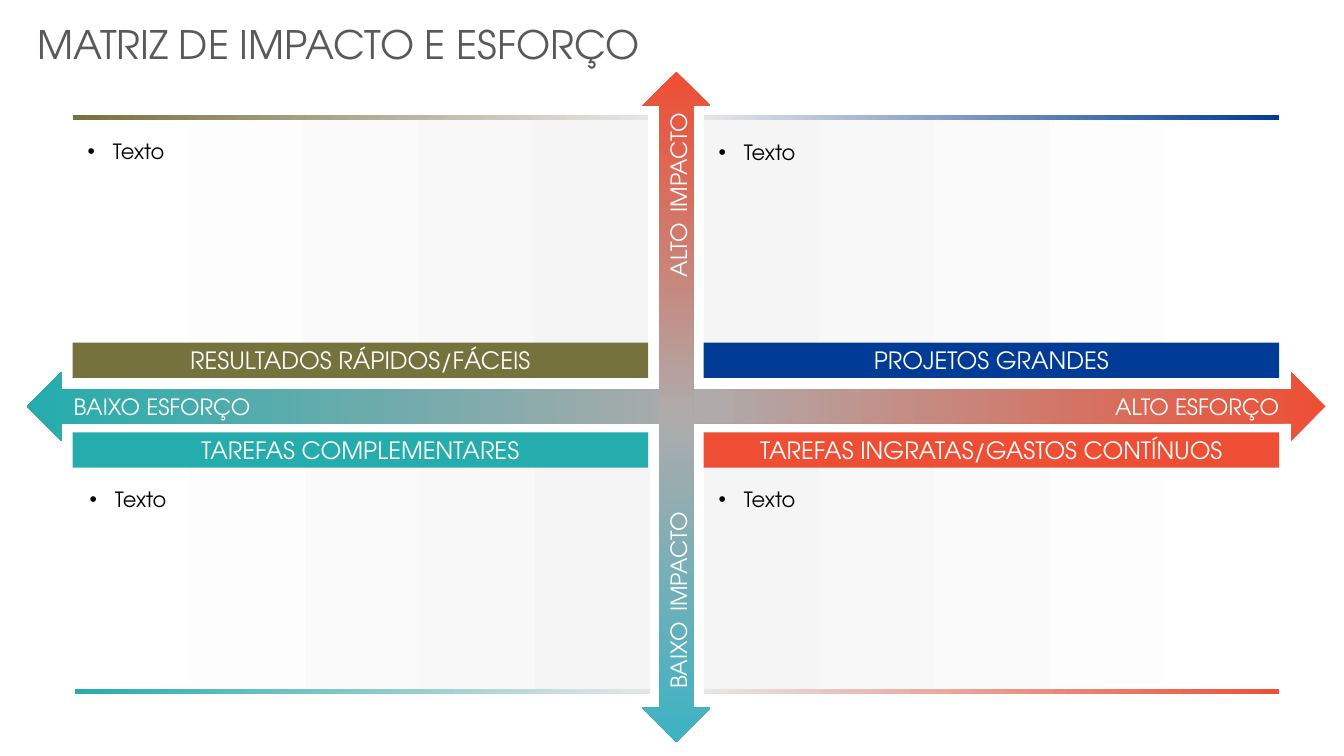
import pptx
import pptx.dml.color
import pptx.enum.shapes
import pptx.enum.text
import pptx.oxml.ns
import pptx.util
from lxml import etree

Pt = pptx.util.Pt
qn = pptx.oxml.ns.qn
SHAPES = pptx.enum.shapes.MSO_SHAPE
ALIGN = pptx.enum.text.PP_ALIGN
ANCHOR = pptx.enum.text.MSO_ANCHOR


def color(value):
    return pptx.dml.color.RGBColor.from_string(value)


class Painter:
    font = "TeX Gyre Adventor"
    white = "FFFFFF"

    def __init__(self, page):
        self.page = page

    def shape(self, kind, place, fill=None, stops=None, angle=0, rotation=0):
        shape = self.page.shapes.add_shape(kind, *map(Pt, place))
        shape.shadow.inherit = False
        shape.line.fill.background()
        shape.rotation = rotation
        if fill:
            shape.fill.solid()
            shape.fill.fore_color.rgb = color(fill)
        else:
            self.gradient(shape, stops, angle)
        return shape

    def gradient(self, shape, stops, angle):
        shape.fill.gradient()
        shape.fill.gradient_angle = (360 - angle) % 360
        stop_list = next(shape.element.iter(qn("a:gsLst")))
        for stop in list(stop_list):
            stop_list.remove(stop)
        for position, value in stops:
            stop = etree.SubElement(stop_list, qn("a:gs"), pos=str(position * 1000))
            etree.SubElement(stop, qn("a:srgbClr"), val=value)

    def rectangle(self, place, fill=None, stops=None):
        return self.shape(SHAPES.RECTANGLE, place, fill, stops)

    def arrow(self, place, stops, rotation=0):
        arrow = self.shape(SHAPES.UP_DOWN_ARROW, place, stops=stops, angle=90, rotation=rotation)
        arrow.adjustments[0] = 0.463
        arrow.adjustments[1] = 0.5

    def fill_text(self, box, spans, ink, align=ALIGN.LEFT, anchor=ANCHOR.MIDDLE,
                  insets=(0, 0, 0, 0), wrap=True):
        frame = box.text_frame
        frame.word_wrap = wrap
        frame.vertical_anchor = anchor
        frame.margin_left, frame.margin_top, frame.margin_right, frame.margin_bottom = map(Pt, insets)
        para = frame.paragraphs[0]
        para.alignment = align
        for text, size in spans:
            span = para.add_run()
            span.text = text
            span.font.size = Pt(size)
            span.font.name = self.font
            span.font.color.rgb = color(ink)
        return para

    def label(self, place, spans, ink=white, rotation=0, **layout):
        box = self.page.shapes.add_textbox(*map(Pt, place))
        box.rotation = rotation
        self.fill_text(box, spans, ink, **layout)
        return box

    def banner(self, place, fill, text):
        self.fill_text(self.rectangle(place, fill), [(text, 17)], self.white, ALIGN.CENTER)

    def panel(self, place, stops, insets):
        box = self.rectangle(place, stops=stops)
        para = self.fill_text(box, [("Texto", 15)], "000000", anchor=ANCHOR.TOP, insets=insets)
        para.line_spacing = 1.15
        para.space_after = Pt(8)
        properties = para._p.get_or_add_pPr()
        properties.set("marL", str(Pt(18)))
        properties.set("indent", str(Pt(-18)))
        etree.SubElement(properties, qn("a:buFont"), typeface="Arial")
        etree.SubElement(properties, qn("a:buChar"), char="•")


def main():
    deck = pptx.Presentation()
    deck.slide_width, deck.slide_height = Pt(960), Pt(540)
    painter = Painter(deck.slides.add_slide(deck.slide_layouts[6]))

    title = painter.label((19.4, 10.8, 596.2, 41.2), [("MATRIZ DE IMPACTO E ESFORÇO", 28)],
                          "595959", anchor=ANCHOR.TOP, insets=(7.2, 3.6, 7.2, 3.6))
    title.text_frame.auto_size = pptx.enum.text.MSO_AUTO_SIZE.SHAPE_TO_FIT_TEXT

    left, lower_left, right = 51.84, 53.28, 502.56
    width, height, banner_height, rule_height = 411.12, 187.2, 25.2, 3.6
    upper, lower = 82.1, 308.9
    upper_banner = 244.8
    lower_rule = lower + height - rule_height
    upper_insets, lower_insets = (10.8, 14.4, 7.2, 21.6), (10.8, 36, 7.2, 3.6)
    quadrants = [
        (left, left, upper, upper_banner, upper, upper_insets,
         "76723E", "76723E", "RESULTADOS RÁPIDOS/FÁCEIS"),
        (right, right, upper + 0.7, upper_banner, upper, upper_insets,
         "003C95", "003C95", "PROJETOS GRANDES"),
        (left, lower_left, lower, lower, lower_rule, lower_insets,
         "25ACAD", "25ACAD", "TAREFAS COMPLEMENTARES"),
        (right, right, lower, lower, lower_rule, lower_insets,
         "EE4E34", "ED4F35", "TAREFAS INGRATAS/GASTOS CONTÍNUOS"),
    ]
    for banner_x, x, panel_y, banner_y, rule_y, insets, fill, accent, name in quadrants:
        step = -1 if x == right else 1
        shades = ["FFFFFF", "F6F5F5"][::step]
        fade = [accent, "E7E6E6"][::step]
        painter.panel((x, panel_y, width, height), list(zip((0, 100), shades)), insets)
        painter.banner((banner_x, banner_y, width, banner_height), fill, name)
        painter.rectangle((x, rule_y, width, rule_height), stops=list(zip((0, 100), fade)))

    painter.arrow((458.6, -173.5, 49, 927.4),
                  [(0, "ED4F35"), (48, "AFABAB"), (100, "25ACAD")], rotation=90)
    painter.arrow((458.6, 51.1, 49, 478.8),
                  [(0, "EE4E34"), (51, "AFABAB"), (100, "3CB3C4")])

    painter.label((52.6, 279.4, 205.2, 21.6), [("BAIXO ESFORÇO", 16)])
    painter.label((776.9, 279.4, 136.8, 21.6), [("ALTO ESFORÇO", 16)], align=ALIGN.RIGHT)
    impacts = [("BAIXO", (401.8, 399.6, 155.5, 29.5), ALIGN.LEFT),
               ("ALTO", (415.4, 124.6, 129.6, 29.5), ALIGN.CENTER)]
    for level, place, align in impacts:
        painter.label(place, [(level, 16), (" ", 28), ("IMPACTO", 16)],
                      rotation=270, align=align, wrap=False)

    deck.save("out.pptx")


if __name__ == "__main__":
    main()
